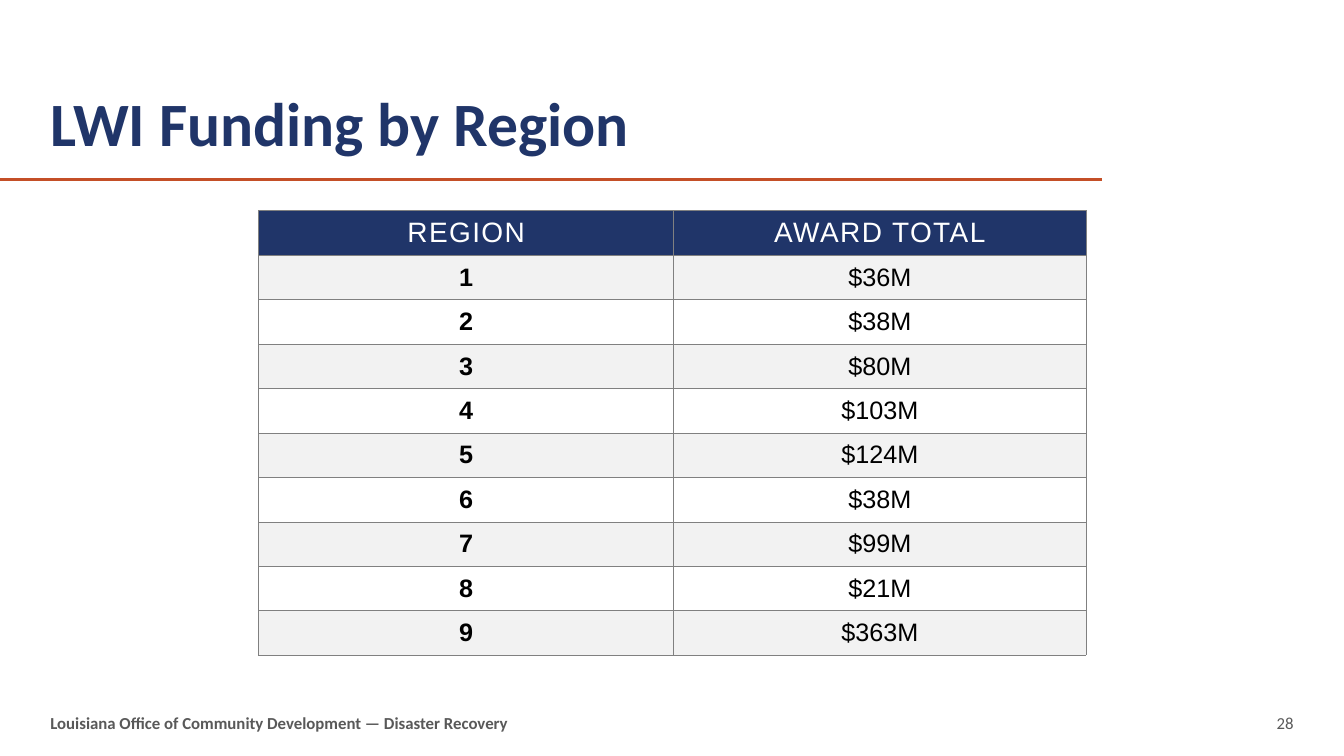
from lxml.etree import SubElement
from pptx import Presentation
from pptx.dml.color import RGBColor
from pptx.enum.shapes import MSO_CONNECTOR
from pptx.enum.text import MSO_ANCHOR as Anchor, MSO_AUTO_SIZE as AutoSize, PP_ALIGN as Align
from pptx.oxml.ns import qn
from pptx.util import Pt

NAVY = RGBColor(0x20, 0x35, 0x69)
RUST = RGBColor(0xC4, 0x4F, 0x27)
GRAY = RGBColor(0x59, 0x59, 0x59)
BAND = RGBColor(0xF2, 0xF2, 0xF2)
BORDER = RGBColor(0x80, 0x80, 0x80)
WHITE = RGBColor(0xFF, 0xFF, 0xFF)
BLACK = RGBColor(0, 0, 0)


def set_text(frame, text, size, color, face="Calibri", bold=False, align=Align.LEFT):
    frame.text = text
    paragraph = frame.paragraphs[0]
    paragraph.alignment = align
    font = paragraph.font
    font.name, font.size, font.bold = face, Pt(size), bold
    font.color.rgb = color
    return paragraph


def clear_margins(frame, anchor):
    frame.margin_left = frame.margin_right = frame.margin_top = frame.margin_bottom = 0
    frame.vertical_anchor = anchor
    frame.word_wrap = True
    frame.auto_size = AutoSize.NONE


prs = Presentation()
prs.slide_width, prs.slide_height = Pt(960), Pt(540)
slide = prs.slides.add_slide(prs.slide_layouts[5])
shapes = slide.shapes

# Rule under the title
rule = shapes.add_connector(MSO_CONNECTOR.STRAIGHT, 0, Pt(128.5), Pt(787), Pt(128.5))
rule.line.color.rgb = RUST
rule.line.width = Pt(2.25)
SubElement(rule._element.spPr, qn("a:effectLst"))

# Title
title = shapes.title
title.left, title.top, title.width, title.height = Pt(36), Pt(32), Pt(751), Pt(82.5)
clear_margins(title.text_frame, Anchor.BOTTOM)
heading = set_text(title.text_frame, "LWI Funding by Region", 44, NAVY, bold=True)
heading.line_spacing = 0.9

# Footer and page number
for text, left, width, bold, align in [
    ("Louisiana Office of Community Development — Disaster Recovery", 36, 480, True, Align.LEFT),
    ("28", 708, 216, False, Align.RIGHT),
]:
    footer = shapes.add_textbox(Pt(left), Pt(504), Pt(width), Pt(25)).text_frame
    clear_margins(footer, Anchor.MIDDLE)
    set_text(footer, text, 12, GRAY, bold=bold, align=align)

# Award table
awards = ["$36M", "$38M", "$80M", "$103M", "$124M", "$38M", "$99M", "$21M", "$363M"]
rows = [("REGION", "AWARD TOTAL")]
rows += [(str(region), award) for region, award in enumerate(awards, 1)]
ROW_HEIGHT = 31.75
table = shapes.add_table(len(rows), 2, Pt(184.75), Pt(150.5), Pt(591),
                         Pt(ROW_HEIGHT * len(rows))).table
table.columns[0].width, table.columns[1].width = Pt(296.5), Pt(294.5)

for r, row in enumerate(rows):
    table.rows[r].height = Pt(ROW_HEIGHT)
    for c, text in enumerate(row):
        cell = table.cell(r, c)
        cell.vertical_anchor = Anchor.MIDDLE
        header = r == 0
        label = set_text(cell.text_frame, text, 20 if header else 18,
                         WHITE if header else BLACK, "Arial",
                         bold=c == 0 and not header, align=Align.CENTER)
        if header:
            label.font._element.set("spc", "100")

        # Borders come before the fill in the cell properties
        props = cell._tc.get_or_add_tcPr()
        for side in ("lnL", "lnR", "lnT", "lnB"):
            edge = SubElement(props, qn(f"a:{side}"), w=str(Pt(0.5)))
            paint = SubElement(edge, qn("a:solidFill"))
            SubElement(paint, qn("a:srgbClr"), val=str(BORDER))
        cell.fill.solid()
        cell.fill.fore_color.rgb = NAVY if header else BAND if r % 2 else WHITE

prs.save("out.pptx")
